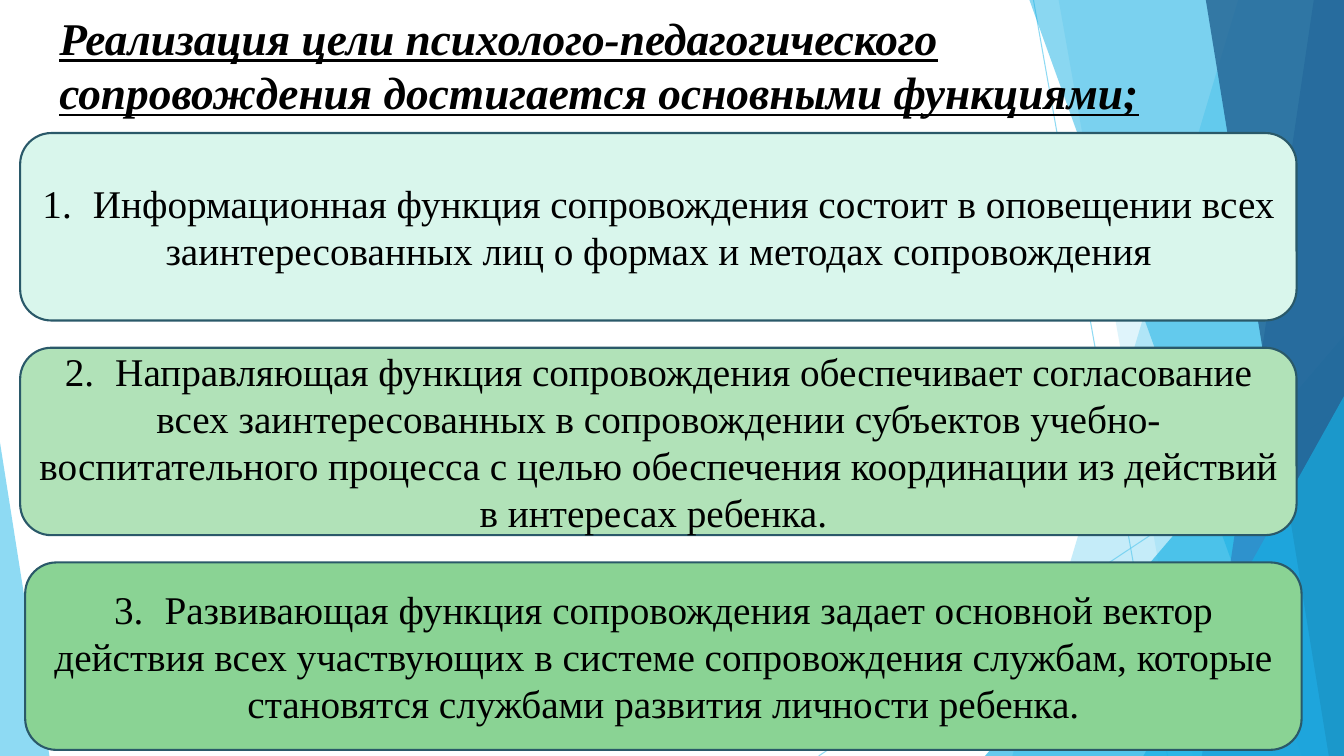
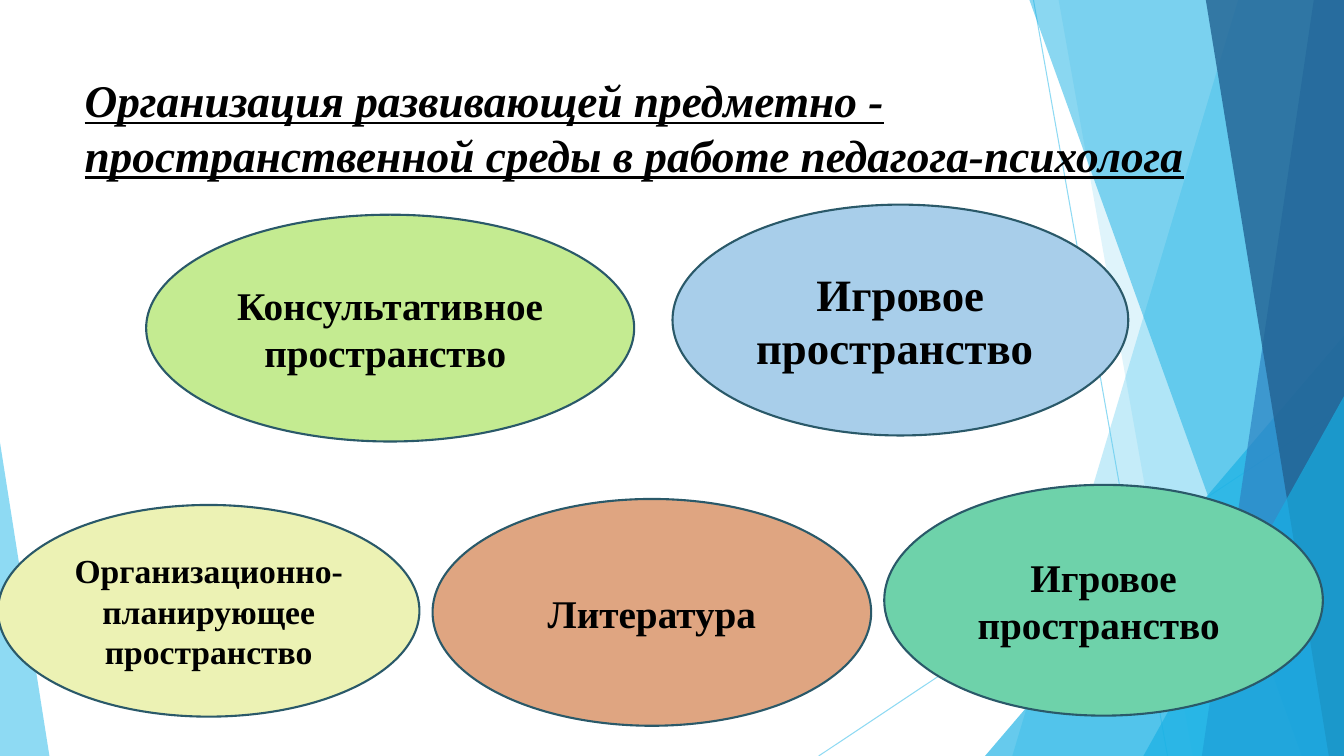
"""Builds two slides on the functions and spaces of psychological support."""
from lxml import etree
from pptx import Presentation
from pptx import util as u
from pptx.dml.color import RGBColor
from pptx.enum import shapes, text
from pptx.oxml import ns

PX = 9144
WIDTH, HEIGHT = 1333, 750
FONT = "Times New Roman"
COLORS = {
    "ink": "000000", "outline": "2A5969",
    "sky": "5FCBEF", "cyan": "17B0E4", "blue": "2E83C3", "navy": "226292",
    "mint": "D9F6EC", "pale_green": "B1E2B8", "green": "8AD394",
    "lemon": "ECF2B4", "clay": "DFA581", "lime": "C4EB91",
    "light_blue": "A8CEEA", "teal": "6ED2AA",
}

RAYS = [((1025, 0), (1158, HEIGHT)), ((WIDTH, 403), (812, HEIGHT))]
FACETS = [
    ("sky", 36, [(1228, 0), (WIDTH, 0), (WIDTH, HEIGHT), (1004, HEIGHT)]),
    ("sky", 20, [(1050, 0), (WIDTH, 0), (WIDTH, HEIGHT), (1183, HEIGHT)]),
    ("cyan", 66, [(WIDTH, 333), (WIDTH, HEIGHT), (977, HEIGHT)]),
    ("cyan", 50, [(1021, 0), (WIDTH, 0), (WIDTH, HEIGHT), (1291, HEIGHT)]),
    ("blue", 70, [(1303, 0), (WIDTH, 0), (WIDTH, HEIGHT), (1192, HEIGHT)]),
    ("navy", 80, [(1196, 0), (WIDTH, 0), (WIDTH, HEIGHT), (1318, HEIGHT)]),
    ("cyan", 66, [(WIDTH, 393), (WIDTH, HEIGHT), (1134, HEIGHT)]),
    ("sky", 70, [(0, 439), (49, HEIGHT), (0, HEIGHT)]),
]

TITLE_FORMAT = {"size": u.Pt(32.4), "bold": True, "italic": True, "underline": True}
FUNCTIONS_TITLE = ("Реализация цели психолого-педагогического сопровождения "
                   "достигается основными функциями;")
FUNCTIONS = [
    ("mint", 20, "1.\tИнформационная функция сопровождения состоит в оповещении всех "
     "заинтересованных лиц о формах и методах сопровождения"),
    ("pale_green", 20, "2.\tНаправляющая функция сопровождения обеспечивает согласование "
     "всех заинтересованных в сопровождении субъектов учебно-воспитательного процесса "
     "с целью обеспечения координации из действий в интересах ребенка. "),
    ("green", 25, "3.\tРазвивающая функция сопровождения задает основной вектор действия "
     "всех участвующих в системе сопровождения службам, которые становятся службами "
     "развития личности ребенка."),
]
FUNCTION_TOP, FUNCTION_STEP = 132, 213
FUNCTION_WIDTH, FUNCTION_HEIGHT = 1266, 186

SPACES_TITLE = ("Организация развивающей предметно - пространственной среды "
                "в работе педагога-психолога")
SPACES = [
    ("lemon", 24, (-2, 501, 418, 210), "Организационно-планирующее пространство"),
    ("clay", 28, (429, 495, 435, 225), "Литература"),
    ("lime", 28, (145, 213, 484, 225), "Консультативное пространство "),
    ("light_blue", 32, (667, 203, 452, 229), "Игровое пространство "),
    ("teal", 28, (877, 481, 435, 229), "Игровое пространство "),
]


def px(*lengths):
    return [u.Emu(length * PX) for length in lengths]


def rgb(name):
    return RGBColor.from_string(COLORS[name])


def set_opacity(shape, percent):
    color = next(shape.element.spPr.iter(ns.qn("a:srgbClr")))
    etree.SubElement(color, ns.qn("a:alpha")).set("val", str(percent * 1000))


def write(box, words, formats, align, anchor):
    frame = box.text_frame
    frame.word_wrap = True
    frame.vertical_anchor = anchor
    para = frame.paragraphs[0]
    para.alignment = align
    span = para.add_run()
    span.text = words
    span.font.color.rgb = rgb("ink")
    for name, value in {"name": FONT, **formats}.items():
        setattr(span.font, name, value)


def add_backdrop(page):
    for start, end in RAYS:
        ray = page.shapes.add_connector(shapes.MSO_CONNECTOR.STRAIGHT, *px(*start, *end))
        ray.line.color.rgb = rgb("sky")
        ray.line.width = u.Pt(0.75)
        set_opacity(ray, 70)
        etree.SubElement(ray.element.spPr, ns.qn("a:effectLst"))
    for color, opacity, corners in FACETS:
        outline = page.shapes.build_freeform(*corners[0], scale=PX)
        outline.add_line_segments(corners[1:], close=True)
        facet = outline.convert_to_shape()
        facet.shadow.inherit = False
        facet.fill.solid()
        facet.fill.fore_color.rgb = rgb(color)
        facet.line.fill.background()
        set_opacity(facet, opacity)


def add_page(deck, title, place):
    page = deck.slides.add_slide(deck.slide_layouts[6])
    add_backdrop(page)
    box = page.shapes.add_textbox(*px(*place))
    write(box, title, TITLE_FORMAT, text.PP_ALIGN.LEFT, text.MSO_ANCHOR.TOP)
    return page


def add_card(page, kind, place, color, words, formats):
    card = page.shapes.add_shape(kind, *px(*place))
    card.shadow.inherit = False
    card.fill.solid()
    card.fill.fore_color.rgb = rgb(color)
    card.line.color.rgb = rgb("outline")
    card.line.width = u.Pt(1.5)
    write(card, words, formats, text.PP_ALIGN.CENTER, text.MSO_ANCHOR.MIDDLE)


def main():
    deck = Presentation()
    deck.slide_width, deck.slide_height = px(WIDTH, HEIGHT)

    page = add_page(deck, FUNCTIONS_TITLE, (49, 5, 1143, 186))
    for row, (color, left, words) in enumerate(FUNCTIONS):
        place = (left, FUNCTION_TOP + row * FUNCTION_STEP, FUNCTION_WIDTH, FUNCTION_HEIGHT)
        add_card(page, shapes.MSO_SHAPE.ROUNDED_RECTANGLE, place, color, words,
                 {"size": u.Pt(28)})

    page = add_page(deck, SPACES_TITLE, (74, 67, 1190, 144))
    for color, size, place, words in SPACES:
        add_card(page, shapes.MSO_SHAPE.OVAL, place, color, words,
                 {"size": u.Pt(size), "bold": True})

    deck.save("out.pptx")


if __name__ == "__main__":
    main()
